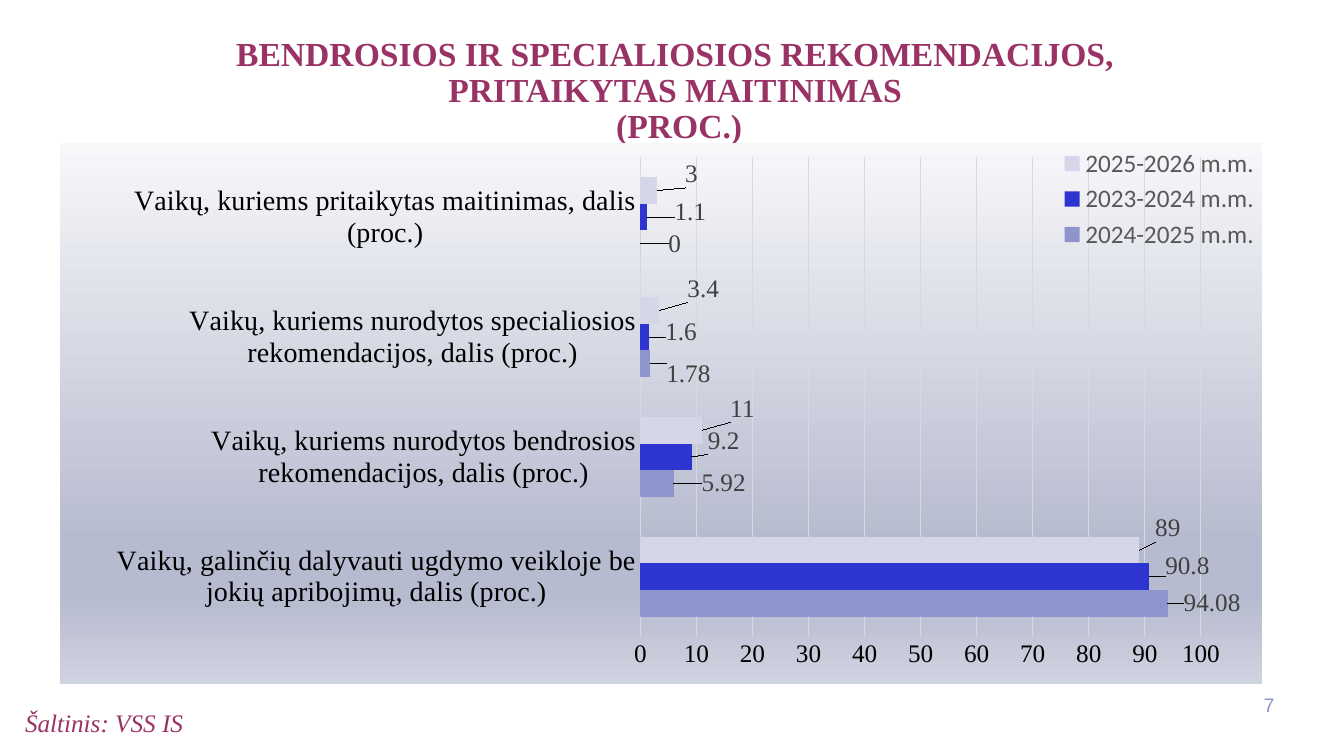
from dataclasses import dataclass

from lxml import etree
from pptx import Presentation
from pptx.chart.data import CategoryChartData
from pptx.dml.color import RGBColor
from pptx.enum.chart import XL_CHART_TYPE as ChartType
from pptx.enum.chart import XL_LABEL_POSITION as LabelPosition
from pptx.enum.chart import XL_LEGEND_POSITION as LegendPosition
from pptx.enum.chart import XL_TICK_MARK as TickMark
from pptx.enum.text import MSO_ANCHOR as Anchor
from pptx.enum.text import PP_ALIGN as Align
from pptx.oxml import parse_xml
from pptx.oxml.ns import qn
from pptx.util import Inches, Pt


@dataclass(frozen=True)
class Theme:
    serif: str = "Times New Roman"
    sans: str = "Calibri"
    number_font: str = "Arial"
    accent: str = "993366"
    number: str = "8E96CD"
    black: str = "000000"
    label: str = "404040"
    legend: str = "595959"
    grid: str = "D9D9D9"
    title_size: int = 24
    category_size: int = 20
    body_size: int = 18
    number_size: int = 14
    chart_size: int = 10
    gradient: tuple = ((0, "F7F7FA"), (74, "B7BBCF"), (83, "B7BBCF"), (100, "CFD2DF"))


THEME = Theme()
NAMESPACES = (
    'xmlns:c="http://schemas.openxmlformats.org/drawingml/2006/chart" '
    'xmlns:a="http://schemas.openxmlformats.org/drawingml/2006/main"'
)
TITLE_LINES = (
    "BENDROSIOS IR SPECIALIOSIOS REKOMENDACIJOS,",
    "PRITAIKYTAS MAITINIMAS",
    " (PROC.)",
)
CATEGORIES = (
    "Vaikų, galinčių dalyvauti ugdymo veikloje be jokių apribojimų, dalis (proc.)",
    "Vaikų, kuriems nurodytos bendrosios rekomendacijos, dalis (proc.)",
    "Vaikų, kuriems nurodytos specialiosios rekomendacijos, dalis (proc.)",
    "Vaikų, kuriems pritaikytas maitinimas, dalis (proc.)",
)
# Name, colour, values, label shifts as fractions of the chart size
SERIES = (
    ("2024-2025 m.m.", "8D95CC", (94.08, 5.92, 1.78, 0),
     ((0.01, 0), (0.02, 0), (0.01, 0.02), (0.02, 0))),
    ("2023-2024 m.m.", "2E34D0", (90.8, 9.2, 1.6, 1.1),
     ((0.01, -0.02), (0.01, -0.03), (0.01, -0.01), (0.02, -0.01))),
    ("2025-2026 m.m.", "D5D7E8", (89, 11, 3.4, 3),
     ((0.01, -0.04), (0.02, -0.04), (0.02, -0.04), (0.02, -0.03))),
)


def style_font(font, name, size, color, bold=False, italic=False):
    font.name = name
    font.size = Pt(size)
    font.color.rgb = RGBColor.from_string(color)
    font.bold = bold
    font.italic = italic


def add_text(slide, box, lines, align, *style, line_spacing=None, **emphasis):
    """Place one vertically centred paragraph, with a line break between lines."""
    shape = slide.shapes.add_textbox(*map(Inches, box))
    frame = shape.text_frame
    frame.word_wrap = True
    frame.vertical_anchor = Anchor.MIDDLE
    paragraph = frame.paragraphs[0]
    paragraph.alignment = align
    paragraph.line_spacing = line_spacing
    for index, line in enumerate(lines):
        if index:
            paragraph.add_line_break()
        run = paragraph.add_run()
        run.text = line
        style_font(run.font, *style, **emphasis)


def manual_layout(**settings):
    layout = parse_xml(f"<c:layout {NAMESPACES}><c:manualLayout/></c:layout>")
    for name, value in settings.items():
        etree.SubElement(layout[0], qn(f"c:{name}")).set("val", str(value))
    return layout


def fill_chart_background(chart):
    stops = "".join(
        f'<a:gs pos="{position * 1000}"><a:srgbClr val="{color}"/></a:gs>'
        for position, color in THEME.gradient
    )
    properties = parse_xml(
        f"<c:spPr {NAMESPACES}><a:gradFill><a:gsLst>{stops}</a:gsLst>"
        '<a:lin ang="5400000" scaled="0"/></a:gradFill>'
        "<a:ln><a:noFill/></a:ln></c:spPr>"
    )
    chart.element.find(qn("c:chart")).addnext(properties)


def place_plot(chart):
    plot_area = chart.element.find(qn("c:chart")).find(qn("c:plotArea"))
    for layout in plot_area.findall(qn("c:layout")):
        plot_area.remove(layout)
    plot_area.insert(0, manual_layout(
        layoutTarget="inner", xMode="edge", yMode="edge",
        x=0.483, y=0.026, w=0.466, h=0.886,
    ))


def style_axes(chart):
    sizes = ((chart.category_axis, THEME.category_size), (chart.value_axis, THEME.body_size))
    for axis, size in sizes:
        axis.major_tick_mark = axis.minor_tick_mark = TickMark.NONE
        axis.format.line.fill.background()
        style_font(axis.tick_labels.font, THEME.serif, size, THEME.black)
    chart.category_axis.has_major_gridlines = False
    value_axis = chart.value_axis
    value_axis.minimum_scale, value_axis.maximum_scale = 0, 100
    value_axis.major_unit = 10
    grid_line = value_axis.major_gridlines.format.line
    grid_line.color.rgb = RGBColor.from_string(THEME.grid)
    grid_line.width = Pt(0.75)


def style_series(series, color, shifts):
    series.format.fill.solid()
    series.format.fill.fore_color.rgb = RGBColor.from_string(color)
    series.invert_if_negative = False
    labels = series.data_labels
    labels.show_value = True
    labels.position = LabelPosition.OUTSIDE_END
    style_font(labels.font, THEME.serif, THEME.body_size, THEME.label)
    for index, (x, y) in enumerate(shifts):
        label = series.points[index].data_label
        style_font(label.font, THEME.serif, THEME.body_size, THEME.label)
        label.position = LabelPosition.OUTSIDE_END
    label_elements = labels._element.findall(qn("c:dLbl"))
    for element, (x, y) in zip(label_elements, shifts):
        element.find(qn("c:idx")).addnext(manual_layout(x=x, y=y))


def add_recommendations_chart(slide, box):
    data = CategoryChartData()
    data.categories = CATEGORIES
    for name, _, values, _ in SERIES:
        data.add_series(name, values)
    frame = slide.shapes.add_chart(ChartType.BAR_CLUSTERED, *map(Inches, box), data)
    chart = frame.chart
    style_font(chart.font, THEME.sans, THEME.chart_size, THEME.black)
    chart.has_title = False
    chart.has_legend = True
    chart.legend.position = LegendPosition.CORNER
    chart.legend.include_in_layout = False
    style_font(chart.legend.font, THEME.sans, THEME.body_size, THEME.legend)
    plot = chart.plots[0]
    plot.gap_width = 150
    plot.vary_by_categories = False
    style_axes(chart)
    for series, (_, color, _, shifts) in zip(plot.series, SERIES):
        style_series(series, color, shifts)
    fill_chart_background(chart)
    place_plot(chart)


def main():
    presentation = Presentation()
    presentation.slide_width = Inches(13.33)
    presentation.slide_height = Inches(7.5)
    slide = presentation.slides.add_slide(presentation.slide_layouts[6])
    add_text(slide, (0.15, 0.31, 13.09, 1.2), TITLE_LINES, Align.CENTER,
             THEME.serif, THEME.title_size, THEME.accent, bold=True, line_spacing=0.9)
    add_text(slide, (0.15, 6.98, 6.3, 0.38), ("Šaltinis: VSS IS",), Align.LEFT,
             THEME.serif, THEME.body_size, THEME.accent, italic=True)
    add_text(slide, (12.22, 6.79, 0.52, 0.4), ("7",), Align.RIGHT,
             THEME.number_font, THEME.number_size, THEME.number)
    add_recommendations_chart(slide, (0.59, 1.42, 11.93, 5.37))
    presentation.save("out.pptx")


if __name__ == "__main__":
    main()
